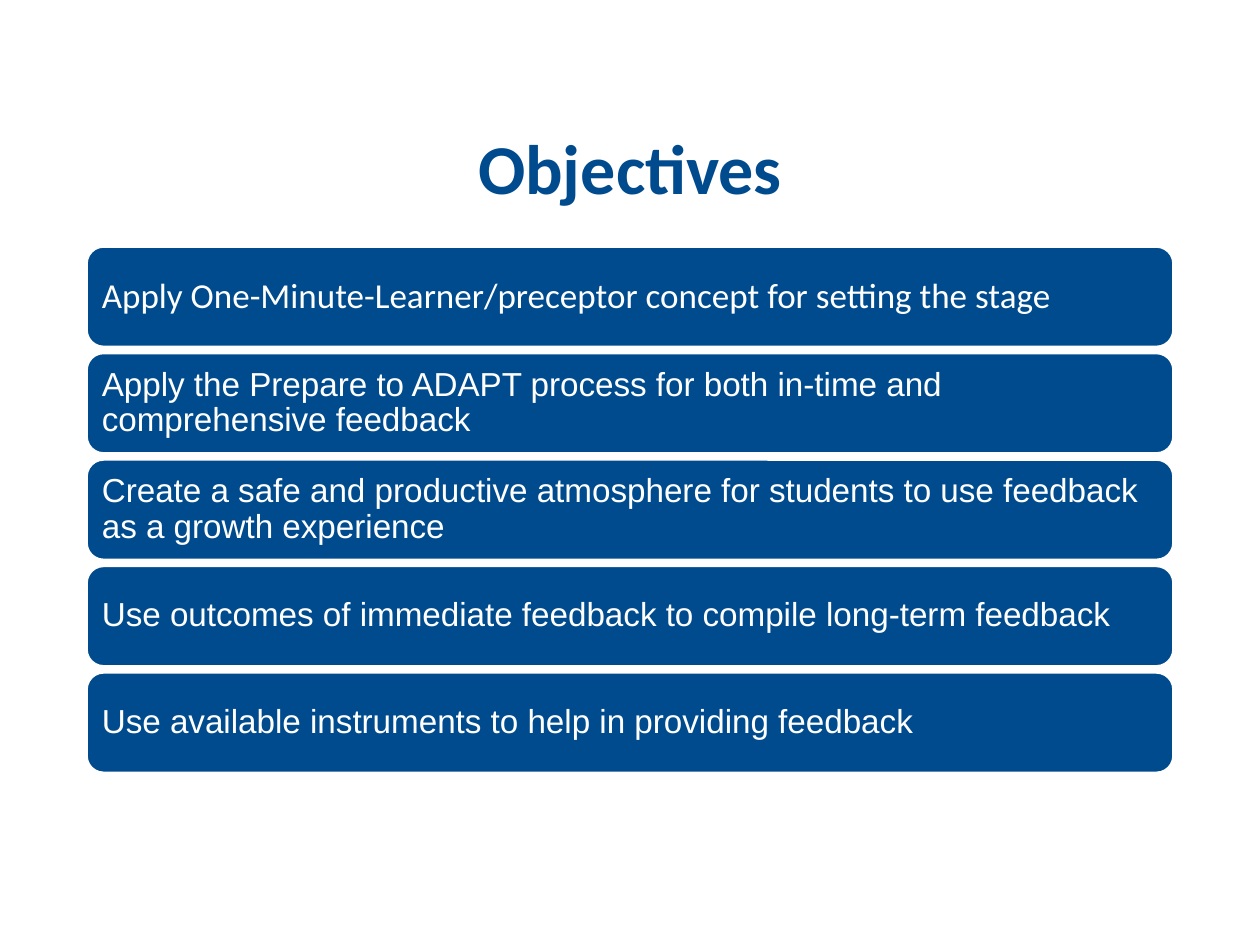
from pptx import Presentation
from pptx.dml.color import RGBColor
from pptx.enum.shapes import MSO_SHAPE
from pptx.enum.text import MSO_ANCHOR, PP_ALIGN
from pptx.util import Inches, Pt

BLUE = RGBColor(0x00, 0x4B, 0x8D)
WHITE = RGBColor(0xFF, 0xFF, 0xFF)
LEFT, WIDTH = 0.69, 8.62
TOP, TALL, STEP = 1.96, 0.79, 0.845
GOALS = [
    ("Apply One-Minute-Learner/preceptor concept for setting the stage", "Calibri", 20),
    ("Apply the Prepare to ADAPT process for both in-time and comprehensive feedback", "Arial", 19),
    ("Create a safe and productive atmosphere for students to use feedback as a growth experience", "Arial", 19),
    ("Use outcomes of immediate feedback to compile long-term feedback", "Arial", 19),
    ("Use available instruments to help in providing feedback", "Arial", 19),
]


def write(shape, text, face, size, color, align, bold=False):
    frame = shape.text_frame
    frame.word_wrap = True
    frame.vertical_anchor = MSO_ANCHOR.MIDDLE
    para = frame.paragraphs[0]
    para.alignment = align
    para.line_spacing = 0.9
    run = para.add_run()
    run.text = text
    font = run.font
    font.name, font.size, font.bold = face, Pt(size), bold
    font.color.rgb = color


def add_title(slide, text):
    box = slide.shapes.add_textbox(Inches(LEFT), Inches(0.88), Inches(WIDTH), Inches(0.97))
    write(box, text, "Calibri", 40, BLUE, PP_ALIGN.CENTER, True)


def add_bar(slide, row, text, face, size):
    bar = slide.shapes.add_shape(
        MSO_SHAPE.ROUNDED_RECTANGLE,
        Inches(LEFT), Inches(TOP + row * STEP), Inches(WIDTH), Inches(TALL),
    )
    bar.shadow.inherit = False
    bar.fill.solid()
    bar.fill.fore_color.rgb = BLUE
    bar.line.color.rgb = WHITE
    bar.line.width = Pt(1)
    frame = bar.text_frame
    frame.margin_left = frame.margin_right = Inches(0.08)
    frame.margin_top = frame.margin_bottom = Inches(0.08)
    write(bar, text, face, size, WHITE, PP_ALIGN.LEFT)


def main():
    deck = Presentation()
    deck.slide_width, deck.slide_height = Inches(10), Inches(7.5)
    slide = deck.slides.add_slide(deck.slide_layouts[6])
    add_title(slide, "Objectives")
    for row, goal in enumerate(GOALS):
        add_bar(slide, row, *goal)
    deck.save("out.pptx")


if __name__ == "__main__":
    main()
